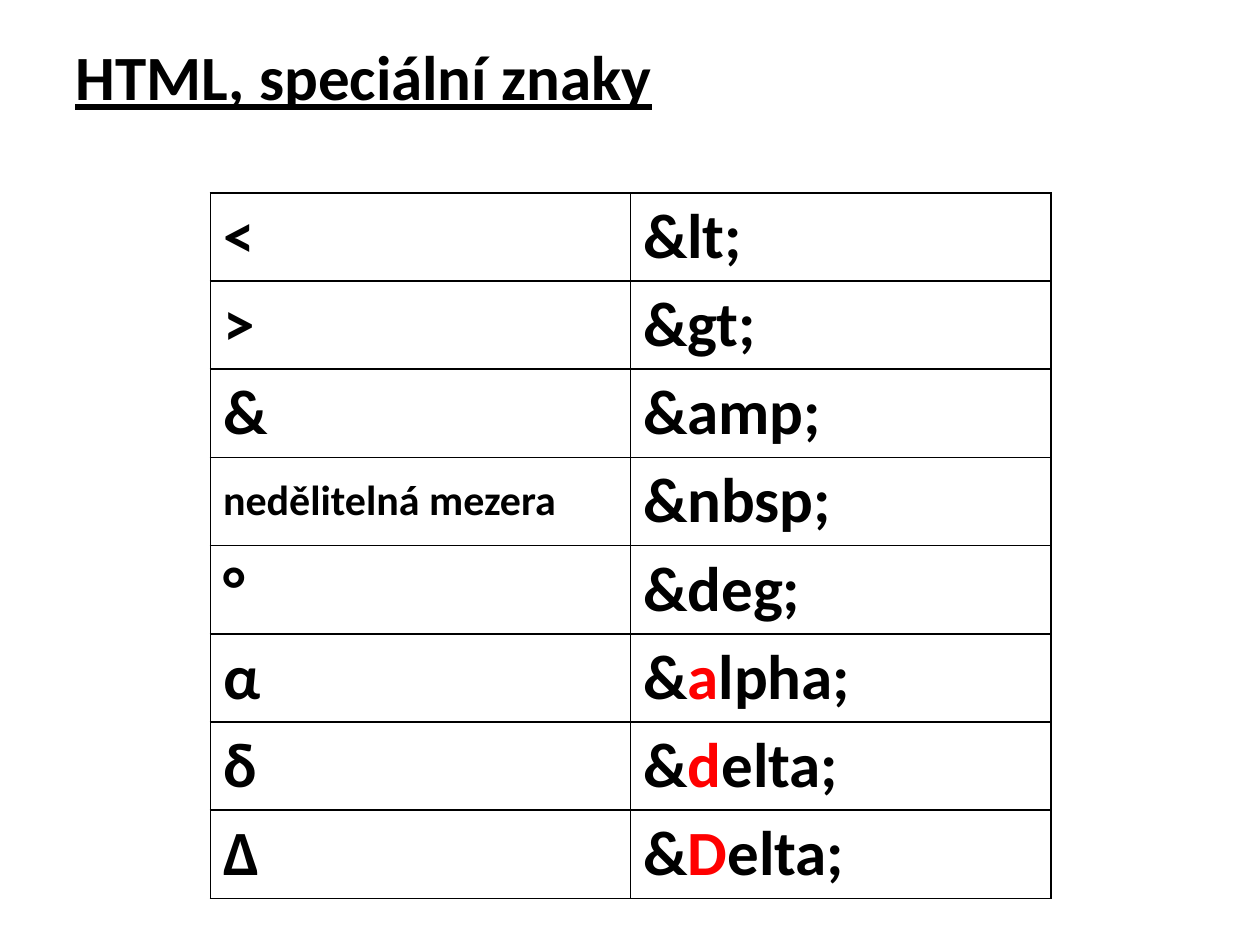
from pptx import Presentation
from pptx.dml.color import RGBColor
from pptx.enum.text import MSO_ANCHOR, MSO_AUTO_SIZE
from pptx.oxml import parse_xml
from pptx.oxml.ns import nsdecls
from pptx.util import Inches, Pt

COLORS = {"text": "000000", "accent": "FF0000", "border": "000000"}
FONT = "Calibri"

# Each row: character, its size, and the entity as (text, colour) runs
ROWS = [
    ("<", 36, [("&lt;", "text")]),
    (">", 36, [("&gt;", "text")]),
    ("&", 36, [("&amp;", "text")]),
    ("nedělitelná mezera", 24, [("&nbsp;", "text")]),
    ("°", 36, [("&deg;", "text")]),
    ("α", 36, [("&", "text"), ("a", "accent"), ("lpha;", "text")]),
    ("δ", 36, [("&", "text"), ("d", "accent"), ("elta;", "text")]),
    ("Δ", 36, [("&", "text"), ("D", "accent"), ("elta;", "text")]),
]


def add_run(p, text, size=36, color="text", underline=None):
    r = p.add_run()
    r.text = text
    r.font.name = FONT
    r.font.size = Pt(size)
    r.font.bold = True
    r.font.underline = underline
    r.font.color.rgb = RGBColor.from_string(COLORS[color])


def set_borders(cell, width=1):
    tc_pr = cell._tc.get_or_add_tcPr()
    for i, side in enumerate(("lnL", "lnR", "lnT", "lnB")):
        tc_pr.insert(i, parse_xml(
            f'<a:{side} {nsdecls("a")} w="{Pt(width)}"><a:solidFill>'
            f'<a:srgbClr val="{COLORS["border"]}"/></a:solidFill></a:{side}>'))


def add_title(slide, x, y, w, h):
    tf = slide.shapes.add_textbox(x, y, w, h).text_frame
    tf.word_wrap = True
    tf.auto_size = MSO_AUTO_SIZE.SHAPE_TO_FIT_TEXT
    add_run(tf.paragraphs[0], "HTML, speciální znaky", underline=True)


def add_entity_table(slide, x, y, w, h):
    table = slide.shapes.add_table(len(ROWS), 2, x, y, w, h).table
    table.first_row = table.horz_banding = False
    for i, (char, size, entity) in enumerate(ROWS):
        left, right = table.cell(i, 0), table.cell(i, 1)
        for cell in (left, right):
            cell.vertical_anchor = MSO_ANCHOR.MIDDLE
            cell.margin_top = cell.margin_bottom = Inches(0.04)
            cell.fill.background()
            set_borders(cell)
        add_run(left.text_frame.paragraphs[0], char, size)
        for text, color in entity:
            add_run(right.text_frame.paragraphs[0], text, color=color)


def main():
    prs = Presentation()
    prs.slide_width, prs.slide_height = Inches(10), Inches(7.5)
    s = prs.slides.add_slide(prs.slide_layouts[6])
    add_title(s, Inches(0.5), Inches(0.25), Inches(7.25), Inches(0.71))
    add_entity_table(s, Inches(1.67), Inches(1.53), Inches(6.67), Inches(5.6))
    prs.save("out.pptx")


if __name__ == "__main__":
    main()
